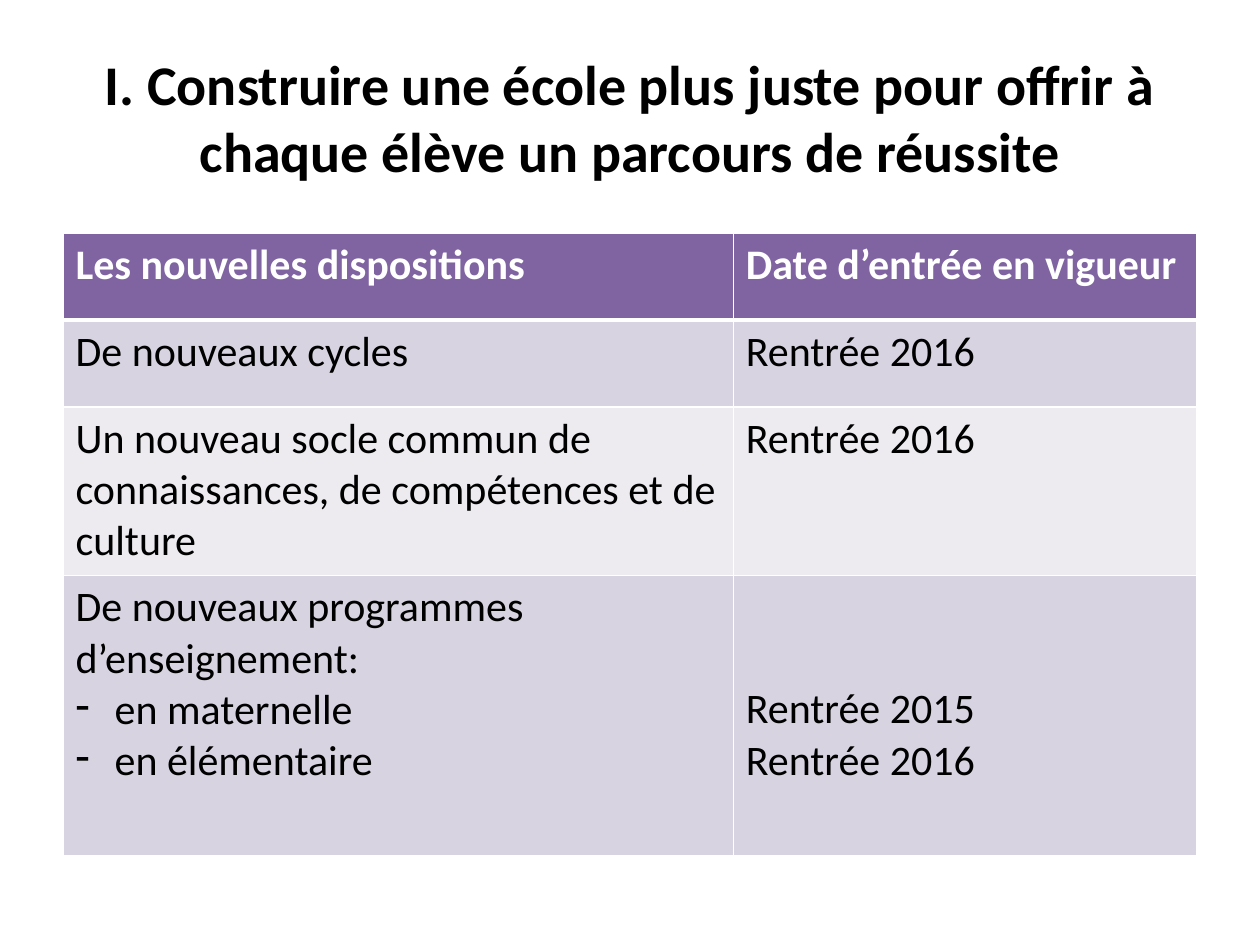
from pptx import Presentation
from pptx.dml.color import RGBColor
from pptx.enum.text import MSO_ANCHOR, PP_ALIGN
from pptx.oxml.ns import qn
from pptx.util import Inches, Pt
from lxml.etree import SubElement

THEME = {
    "font": "Calibri", "title_size": 32, "table_size": 24,
    "text": "000000", "header_text": "FFFFFF", "header_fill": "8064A2",
    "bands": ("D8D3E0", "EDEAF0"), "border": "FFFFFF",
    "border_width": 1, "header_border_width": 3,
}
TITLE = "I. Construire une école plus juste pour offrir à chaque élève un parcours de réussite"
BULLET = "- "  # marks a list item in the content
ROWS = [
    (["Les nouvelles dispositions"], ["Date d’entrée en vigueur"]),
    (["De nouveaux cycles"], ["Rentrée 2016"]),
    (["Un nouveau socle commun de connaissances, de compétences et de culture"],
     ["Rentrée 2016"]),
    (["De nouveaux programmes d’enseignement:", "- en maternelle", "- en élémentaire"],
     ["Rentrée 2015", "Rentrée 2016"]),
]
COLUMN_WIDTHS = (5.32, 3.68)
ROW_HEIGHTS = (0.69, 0.69, 1.34, 2.22)
TITLE_BOX = (0.5, 0.3, 9, 1.25)
TABLE_BOX = (0.5, 1.85, sum(COLUMN_WIDTHS), sum(ROW_HEIGHTS))
BULLET_INDENT = 0.31
DATES_TOP_MARGIN = 0.86  # lines the dates up with the list items


def style_font(font, size, color, bold):
    values = {"name": THEME["font"], "size": Pt(size), "bold": bold}
    for name, value in values.items():
        setattr(font, name, value)
    font.color.rgb = RGBColor.from_string(color)


def add_title(slide):
    title = slide.shapes.title
    box = map(Inches, TITLE_BOX)
    for name, value in zip(("left", "top", "width", "height"), box):
        setattr(title, name, value)
    frame = title.text_frame
    frame.text = TITLE
    frame.word_wrap = True
    frame.vertical_anchor = MSO_ANCHOR.MIDDLE
    paragraph = frame.paragraphs[0]
    paragraph.alignment = PP_ALIGN.CENTER
    style_font(paragraph.runs[0].font, THEME["title_size"], THEME["text"], True)


def set_borders(cell, widths):
    """Draw the four sides; widths maps a side tag to points."""
    properties = cell._tc.get_or_add_tcPr()
    for position, (side, width) in enumerate(widths.items()):
        line = SubElement(properties, qn(f"a:{side}"), w=str(Pt(width)))
        fill = SubElement(line, qn("a:solidFill"))
        SubElement(fill, qn("a:srgbClr"), val=THEME["border"])
        properties.insert(position, line)  # borders precede the fill


def add_bullet(paragraph):
    properties = paragraph._p.get_or_add_pPr()
    properties.set("marL", str(Inches(BULLET_INDENT)))
    properties.set("indent", str(-Inches(BULLET_INDENT)))
    SubElement(properties, qn("a:buChar"), char=BULLET.strip())


def fill_cell(cell, lines, row):
    is_header = row == 0
    bands = THEME["bands"]
    color = THEME["header_fill"] if is_header else bands[(row - 1) % len(bands)]
    cell.fill.solid()
    cell.fill.fore_color.rgb = RGBColor.from_string(color)

    widths = dict.fromkeys(("lnL", "lnR", "lnT", "lnB"), THEME["border_width"])
    if row < 2:
        widths["lnB" if is_header else "lnT"] = THEME["header_border_width"]
    set_borders(cell, widths)

    frame = cell.text_frame
    frame.text = "\n".join(line.removeprefix(BULLET) for line in lines)
    text_color = THEME["header_text" if is_header else "text"]
    for line, paragraph in zip(lines, frame.paragraphs):
        style_font(paragraph.runs[0].font, THEME["table_size"], text_color, is_header)
        if line.startswith(BULLET):
            add_bullet(paragraph)


def add_table(slide):
    frame = slide.shapes.add_table(
        len(ROWS), len(COLUMN_WIDTHS), *map(Inches, TABLE_BOX))
    table = frame.table
    for column, width in zip(table.columns, COLUMN_WIDTHS):
        column.width = Inches(width)
    for row, height in zip(table.rows, ROW_HEIGHTS):
        row.height = Inches(height)
    for row, cells in enumerate(ROWS):
        for column, lines in enumerate(cells):
            fill_cell(table.cell(row, column), lines, row)
    table.cell(len(ROWS) - 1, 1).margin_top = Inches(DATES_TOP_MARGIN)


def main():
    presentation = Presentation()
    presentation.slide_width, presentation.slide_height = Inches(10), Inches(7.5)
    title_only = presentation.slide_layouts[5]
    slide = presentation.slides.add_slide(title_only)
    add_title(slide)
    add_table(slide)
    presentation.save("out.pptx")


if __name__ == "__main__":
    main()
